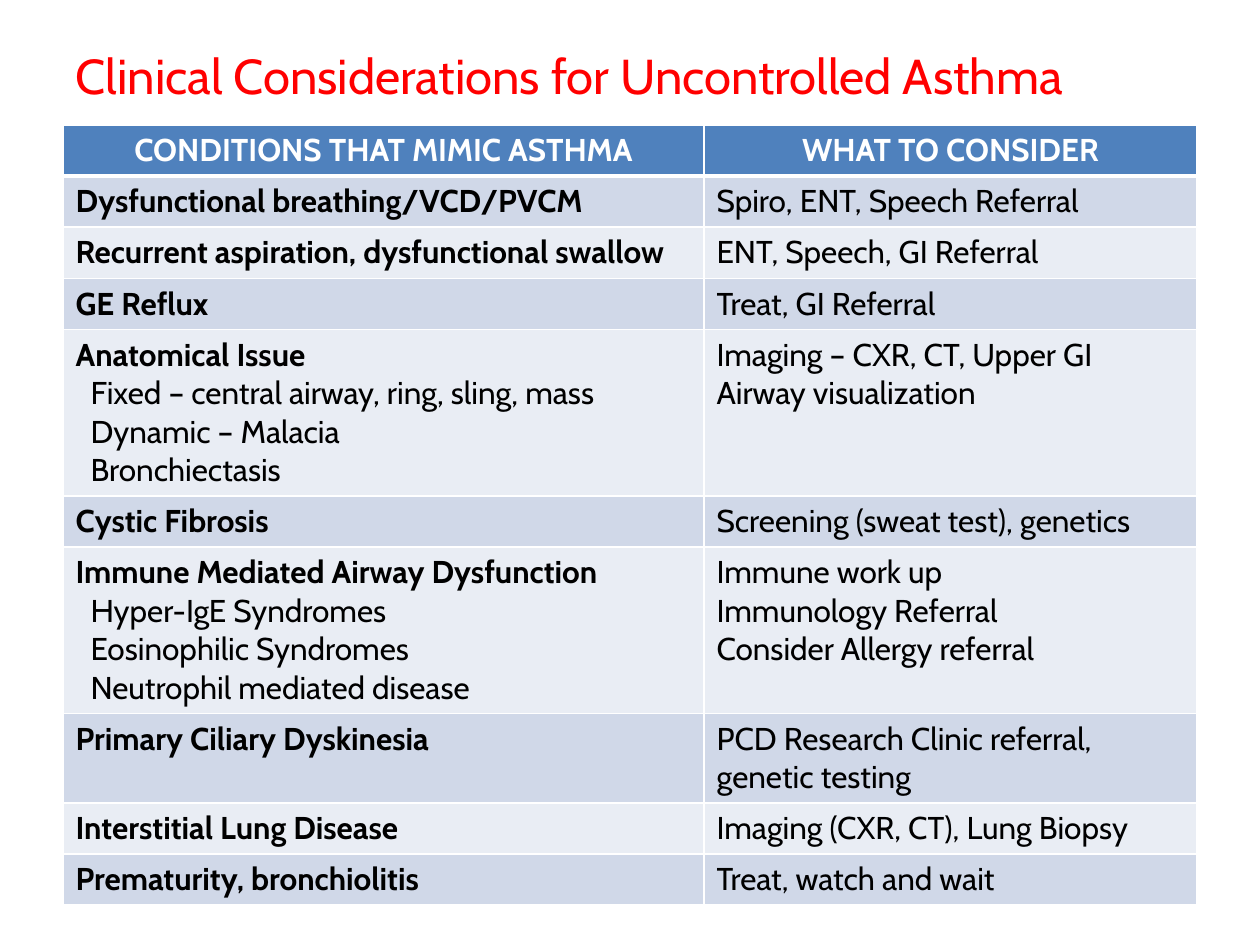
from dataclasses import dataclass

from lxml import etree
from pptx import Presentation
from pptx.dml.color import RGBColor
from pptx.enum.text import MSO_ANCHOR, PP_ALIGN
from pptx.oxml.ns import qn
from pptx.util import Emu, Pt

PX = 914400 / 126
FONT = "Cabin"
LEFT, CENTER = PP_ALIGN.LEFT, PP_ALIGN.CENTER
TOP = MSO_ANCHOR.TOP

RED = RGBColor(0xFF, 0x00, 0x00)
BLACK = RGBColor(0x00, 0x00, 0x00)
WHITE = RGBColor(0xFF, 0xFF, 0xFF)
HEADER_BLUE = RGBColor(0x4F, 0x81, 0xBD)
BANDS = (RGBColor(0xD0, 0xD8, 0xE8), RGBColor(0xE9, 0xED, 0xF4))

COLUMN_WIDTHS = (641, 493)
LINE_HEIGHT, ROW_PADDING = 38.4, 12.6
SUBTYPE_INDENT = 15
THIN, THICK = 1, 3


@dataclass(frozen=True)
class Condition:
    name: str
    considerations: tuple[str, ...]
    subtypes: tuple[str, ...] = ()
    lines: int = 1


CONDITIONS = (
    Condition("Dysfunctional breathing/VCD/PVCM", ("Spiro, ENT, Speech Referral",)),
    Condition("Recurrent aspiration, dysfunctional swallow", ("ENT, Speech, GI Referral",)),
    Condition("GE Reflux", ("Treat, GI Referral",)),
    Condition(
        "Anatomical Issue",
        ("Imaging – CXR, CT, Upper GI", "Airway visualization"),
        ("Fixed – central airway, ring, sling, mass", "Dynamic – Malacia", "Bronchiectasis"),
        lines=4,
    ),
    Condition("Cystic Fibrosis", ("Screening (sweat test), genetics",)),
    Condition(
        "Immune Mediated Airway Dysfunction",
        ("Immune work up", "Immunology Referral", "Consider Allergy referral"),
        ("Hyper-IgE Syndromes", "Eosinophilic Syndromes", "Neutrophil mediated disease"),
        lines=4,
    ),
    Condition(
        "Primary Ciliary Dyskinesia",
        ("PCD Research Clinic referral, genetic testing",),
        lines=2,
    ),
    Condition("Interstitial Lung Disease", ("Imaging (CXR, CT), Lung Biopsy",)),
    Condition("Prematurity, bronchiolitis", ("Treat, watch and wait",)),
)


def px(length: float) -> Emu:
    return Emu(round(length * PX))


def format_font(font, color: RGBColor, **values) -> None:
    for attribute, value in {"name": FONT, **values}.items():
        setattr(font, attribute, value)
    font.color.rgb = color


def write_line(paragraph, text: str, color: RGBColor = BLACK, bold: bool = False,
               align=LEFT, indent: int = 0) -> None:
    paragraph.alignment = align
    if indent:
        paragraph._p.get_or_add_pPr().set("marL", str(px(indent)))
    run = paragraph.add_run()
    run.text = text
    format_font(run.font, color, size=Pt(18), bold=bold)


def style_cell(cell, fill: RGBColor, top: int = THIN, bottom: int = THIN) -> None:
    """Give a cell white borders (widths in points) and a solid fill."""
    properties = cell._tc.get_or_add_tcPr()
    for side, width in {"L": THIN, "R": THIN, "T": top, "B": bottom}.items():
        border = etree.SubElement(properties, qn(f"a:ln{side}"), w=str(Pt(width)))
        solid = etree.SubElement(border, qn("a:solidFill"))
        etree.SubElement(solid, qn("a:srgbClr"), val=str(WHITE))
    cell.fill.solid()
    cell.fill.fore_color.rgb = fill


def add_title(slide, text: str) -> None:
    title = slide.shapes.title
    for attribute, value in {"left": 63, "top": 38, "width": 1134, "height": 115}.items():
        setattr(title, attribute, px(value))
    frame = title.text_frame
    frame.vertical_anchor = TOP
    frame.margin_top = px(8)
    frame.text = text
    heading = frame.paragraphs[0]
    heading.alignment = LEFT
    format_font(heading.runs[0].font, RED, size=Pt(28))


def fill_condition(cells, condition: Condition) -> None:
    name_frame, consider_frame = (cell.text_frame for cell in cells)
    write_line(name_frame.paragraphs[0], condition.name, bold=True)
    for subtype in condition.subtypes:
        write_line(name_frame.add_paragraph(), subtype, indent=SUBTYPE_INDENT)
    first, *others = condition.considerations
    write_line(consider_frame.paragraphs[0], first)
    for consideration in others:
        write_line(consider_frame.add_paragraph(), consideration)


def add_conditions_table(slide) -> None:
    line_counts = [1] + [condition.lines for condition in CONDITIONS]
    heights = [px(ROW_PADDING + LINE_HEIGHT * count) for count in line_counts]
    table = slide.shapes.add_table(
        len(heights), len(COLUMN_WIDTHS),
        px(63), px(125), px(sum(COLUMN_WIDTHS)), sum(heights),
    ).table
    for column, width in zip(table.columns, COLUMN_WIDTHS):
        column.width = px(width)
    for row, height in zip(table.rows, heights):
        row.height = height

    headings = ("CONDITIONS THAT MIMIC ASTHMA", "WHAT TO CONSIDER")
    for cell, heading in zip(table.rows[0].cells, headings):
        style_cell(cell, HEADER_BLUE, bottom=THICK)
        write_line(cell.text_frame.paragraphs[0], heading, WHITE, bold=True, align=CENTER)

    for index, condition in enumerate(CONDITIONS):
        cells = list(table.rows[index + 1].cells)
        for cell in cells:
            style_cell(cell, BANDS[index % 2], top=THIN if index else THICK)
        fill_condition(cells, condition)


def main() -> None:
    presentation = Presentation()
    presentation.slide_width = px(1260)
    presentation.slide_height = px(945)
    title_only = presentation.slide_layouts[5]
    slide = presentation.slides.add_slide(title_only)
    add_title(slide, "Clinical Considerations for Uncontrolled Asthma")
    add_conditions_table(slide)
    presentation.save("out.pptx")


if __name__ == "__main__":
    main()
